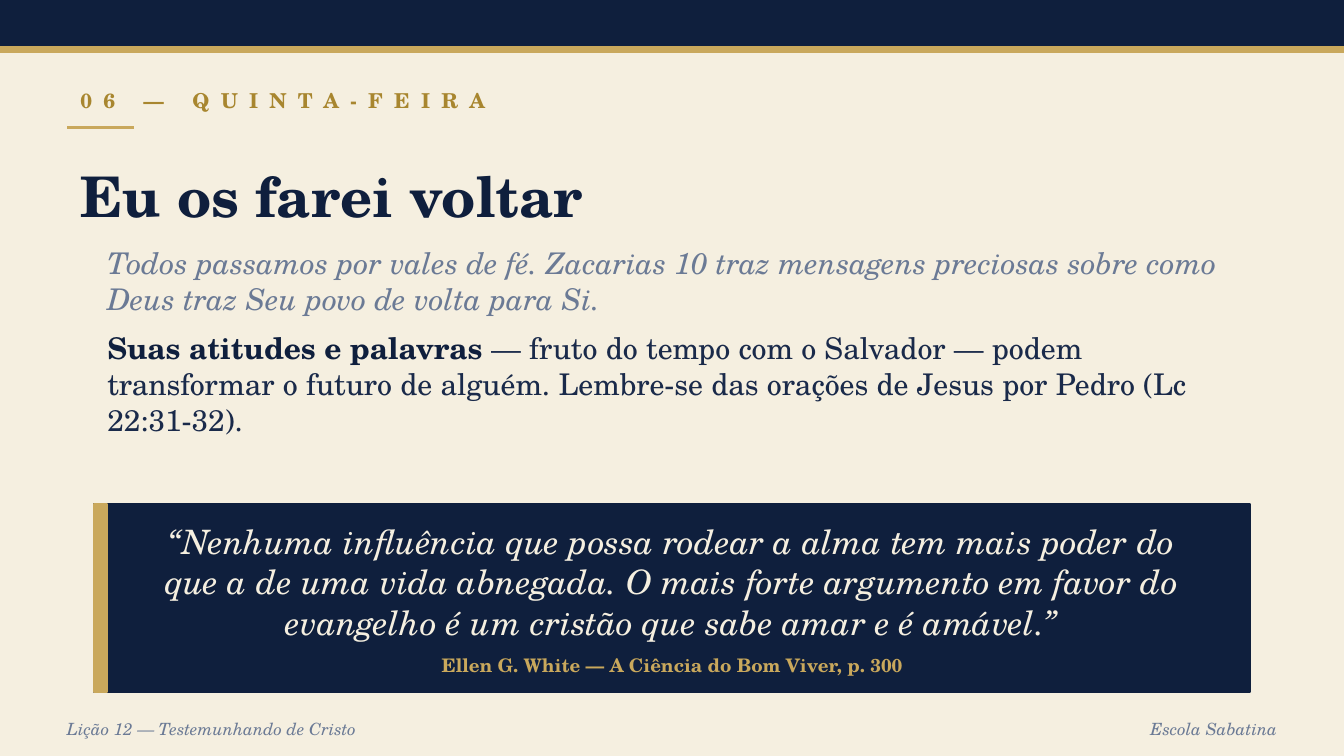
from lxml.etree import SubElement
from pptx import Presentation
from pptx.dml.color import RGBColor
from pptx.enum.shapes import MSO_CONNECTOR, MSO_SHAPE
from pptx.enum.text import MSO_ANCHOR, PP_ALIGN
from pptx.oxml.ns import qn
from pptx.util import Pt

NAVY = RGBColor(0x0F, 0x1F, 0x3D)
INK = RGBColor(0x1A, 0x2A, 0x4A)
GOLD = RGBColor(0xC9, 0xA8, 0x5C)
OCHRE = RGBColor(0xA8, 0x86, 0x2F)
GREY = RGBColor(0x6B, 0x7A, 0x95)
CREAM = RGBColor(0xF5, 0xEF, 0xE0)
FONT = "TeX Gyre Schola"
LEFT, MID, RIGHT = PP_ALIGN.LEFT, PP_ALIGN.CENTER, PP_ALIGN.RIGHT

WIDE, HIGH = 720, 405
EDGE = 36      # left edge of the headings
INSET = 50.4   # left edge of the body and the quote card
CARD = 270     # top of the quote card
PAD = 21.6     # from card edge to quote text

BARS = [  # left, top, width, height, colour
    (0, 0, WIDE, 25.2, NAVY),
    (0, 25.2, WIDE, 2.88, GOLD),
    (INSET, CARD, WIDE - 2 * INSET, 100.8, NAVY),
    (INSET, CARD, 7.2, 100.8, GOLD),
]

QUOTE = ("“Nenhuma influência que possa rodear a alma tem mais poder do que a de "
         "uma vida abnegada. O mais forte argumento em favor do evangelho é um "
         "cristão que sabe amar e é amável.”")
SOURCE = "Ellen G. White — A Ciência do Bom Viver, p. 300"
INTRO = ("Todos passamos por vales de fé. Zacarias 10 traz mensagens preciosas "
         "sobre como Deus traz Seu povo de volta para Si.")
LEAD = "Suas atitudes e palavras"
REST = (" — fruto do tempo com o Salvador — podem transformar o futuro de alguém. "
        "Lembre-se das orações de Jesus por Pedro (Lc 22:31-32).")

QLEFT, QWIDE = INSET + PAD, WIDE - 2 * (INSET + PAD)
LABELS = [  # text, left, top, width, height, size, colour, bold, align, spacing
    ("Lição 12 — Testemunhando de Cristo", 28.8, 381.6, 432, 18, 9, GREY, False, LEFT, 0),
    ("Escola Sabatina", 547.2, 381.6, 144, 18, 9, GREY, False, RIGHT, 0),
    ("06 — QUINTA-FEIRA", EDGE, 43.2, 648, 21.6, 11, OCHRE, True, LEFT, 6),
    ("Eu os farei voltar", EDGE, 75.6, 648, 57.6, 30, NAVY, True, LEFT, 0),
    (QUOTE, QLEFT, CARD + 7.2, QWIDE, 68.4, 18, CREAM, False, MID, 0),
    (SOURCE, QLEFT, CARD + 75.6, QWIDE, 21.6, 10, GOLD, True, MID, 0),
]


def add_bar(slide, left, top, width, height, color):
    bar = slide.shapes.add_shape(MSO_SHAPE.RECTANGLE, Pt(left), Pt(top), Pt(width), Pt(height))
    bar.shadow.inherit = False
    bar.fill.solid()
    bar.fill.fore_color.rgb = color
    bar.line.color.rgb = color
    bar.line.width = Pt(1)


def add_box(slide, left, top, width, height, anchor):
    frame = slide.shapes.add_textbox(Pt(left), Pt(top), Pt(width), Pt(height)).text_frame
    frame.word_wrap = True
    frame.vertical_anchor = anchor
    return frame


def style(font, size, color, bold=False, italic=False):
    font.name, font.size = FONT, Pt(size)
    font.bold, font.italic = bold, italic
    font.color.rgb = color


def add_label(slide, text, left, top, width, height, size, color, bold, align, spacing):
    """Add one line or quote; what is not bold is italic."""
    para = add_box(slide, left, top, width, height, MSO_ANCHOR.MIDDLE).paragraphs[0]
    run = para.add_run()
    run.text = text
    para.alignment = align
    style(para.font, size, color, bold, not bold)
    if spacing:
        run.font._element.set("spc", str(spacing * 100))


def add_body(slide):
    frame = add_box(slide, INSET, 127.44, WIDE - 2 * INSET, 108, MSO_ANCHOR.TOP)
    intro = frame.paragraphs[0]
    intro.text = INTRO
    style(intro.font, 16, GREY, italic=True)
    para = frame.add_paragraph()
    para.space_before = Pt(7.5)
    style(para.font, 16, INK)
    for text, color, bold in ((LEAD, NAVY, True), (REST, INK, False)):
        run = para.add_run()
        run.text = text
        run.font.bold = bold
        run.font.color.rgb = color


def add_rule(slide):
    rule = slide.shapes.add_connector(MSO_CONNECTOR.STRAIGHT, Pt(EDGE), Pt(68.4), Pt(72), Pt(68.4))
    rule.line.color.rgb = GOLD
    rule.line.width = Pt(1.5)
    SubElement(rule._element.spPr, qn("a:effectLst"))


def main():
    deck = Presentation()
    deck.slide_width, deck.slide_height = Pt(WIDE), Pt(HIGH)
    slide = deck.slides.add_slide(deck.slide_layouts[6])
    slide.background.fill.solid()
    slide.background.fill.fore_color.rgb = CREAM
    for bar in BARS:
        add_bar(slide, *bar)
    add_rule(slide)
    for label in LABELS:
        add_label(slide, *label)
    add_body(slide)
    deck.save("out.pptx")


if __name__ == "__main__":
    main()
